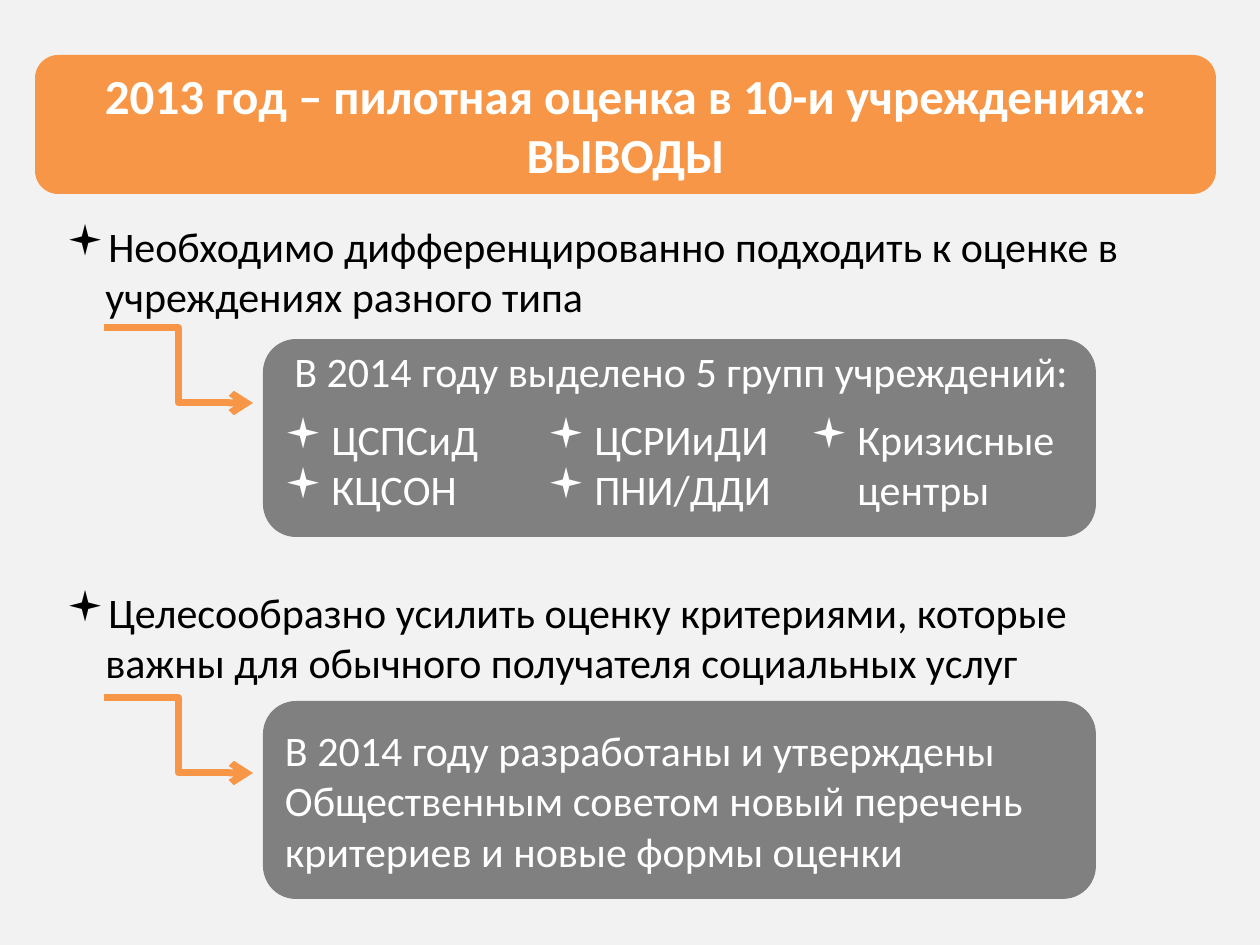
from lxml.etree import SubElement as Sub
from pptx import Presentation
from pptx.dml.color import RGBColor as Rgb
from pptx.enum.shapes import MSO_CONNECTOR as Link, MSO_SHAPE as Form
from pptx.enum.text import MSO_ANCHOR as Anchor, PP_ALIGN as Align
from pptx.oxml.ns import qn
from pptx.util import Pt

WHITE = Rgb(0xFF, 0xFF, 0xFF)
BLACK = Rgb(0, 0, 0)
PALE = Rgb(0xF2, 0xF2, 0xF2)
ORANGE = Rgb(0xF7, 0x96, 0x46)
GRAY = Rgb(0x80, 0x80, 0x80)


def emu(px):
    """Turn px into EMU."""
    return round(px * 914400 / 126)


def write(frame, text, size=24, color=WHITE, bold=False, align=Align.LEFT, hang=0):
    """Fill a frame with one paragraph per line, bulleted if hang is set."""
    frame.word_wrap = True
    for i, line in enumerate(text.split("\n")):
        para = frame.add_paragraph() if i else frame.paragraphs[0]
        para.alignment = align
        run = para.add_run()
        run.text = line
        font = run.font
        font.name, font.size, font.bold = "Calibri", Pt(size), bold
        font.color.rgb = color
        if hang:
            props = para._p.get_or_add_pPr()
            props.set("marL", str(emu(hang)))
            props.set("indent", str(-emu(hang)))
            Sub(props, qn("a:buFont"), typeface="Wingdings")
            Sub(props, qn("a:buChar"), char="▪")


class Deck:
    """Hold the style and the current slide."""

    def __init__(self, wide, high):
        self.file = Presentation()
        self.file.slide_width, self.file.slide_height = emu(wide), emu(high)
        self.slide = self.file.slides.add_slide(self.file.slide_layouts[6])
        fill = self.slide.background.fill
        fill.solid()
        fill.fore_color.rgb = PALE

    def panel(self, box, fill, text="", **style):
        """Add a rounded panel."""
        shape = self.slide.shapes.add_shape(Form.ROUNDED_RECTANGLE, *map(emu, box))
        shape.shadow.inherit = False
        shape.fill.solid()
        shape.fill.fore_color.rgb = fill
        shape.line.fill.background()
        shape.text_frame.vertical_anchor = Anchor.MIDDLE
        if text:
            write(shape.text_frame, text, **style)

    def label(self, box, text, **style):
        """Add a text box."""
        shape = self.slide.shapes.add_textbox(*map(emu, box))
        write(shape.text_frame, text, **style)

    def arrow(self, left, top, wide, high):
        """Add an elbow arrow."""
        ends = map(emu, (left, top, left + wide, top + high))
        link = self.slide.shapes.add_connector(Link.ELBOW, *ends)
        link.line.color.rgb = ORANGE
        link.line.width = Pt(4)
        Sub(link.line._ln, qn("a:tailEnd"), type="arrow")
        Sub(link._element.spPr, qn("a:effectLst"))


def main():
    """Build the slide."""
    deck = Deck(1260, 945)
    deck.panel((35, 55, 1181, 139), ORANGE,
               "2013 год – пилотная оценка в 10-и учреждениях: ВЫВОДЫ",
               size=28, bold=True, align=Align.CENTER)

    deck.label((54, 214, 1131, 115),
               "Необходимо дифференцированно подходить к оценке в учреждениях разного типа",
               color=BLACK, hang=39)
    deck.arrow(104, 328, 149, 75)
    deck.panel((263, 339, 833, 198), GRAY)
    deck.label((282, 339, 922, 63), "В 2014 году выделено 5 групп учреждений:")
    groups = ("ЦСПСиД\nКЦСОН", "ЦСРИиДИ\nПНИ/ДДИ", "Кризисные центры")
    for i, group in enumerate(groups):
        deck.label((272 + 263 * i, 407, 295, 113), group, hang=47)

    deck.label((54, 580, 1150, 115),
               "Целесообразно усилить оценку критериями, которые важны для обычного "
               "получателя социальных услуг", color=BLACK, hang=39)
    deck.arrow(104, 698, 149, 75)
    deck.panel((263, 701, 833, 198), GRAY,
               "В 2014 году разработаны и утверждены Общественным советом новый "
               "перечень критериев и новые формы оценки")
    deck.file.save("out.pptx")


if __name__ == "__main__":
    main()
